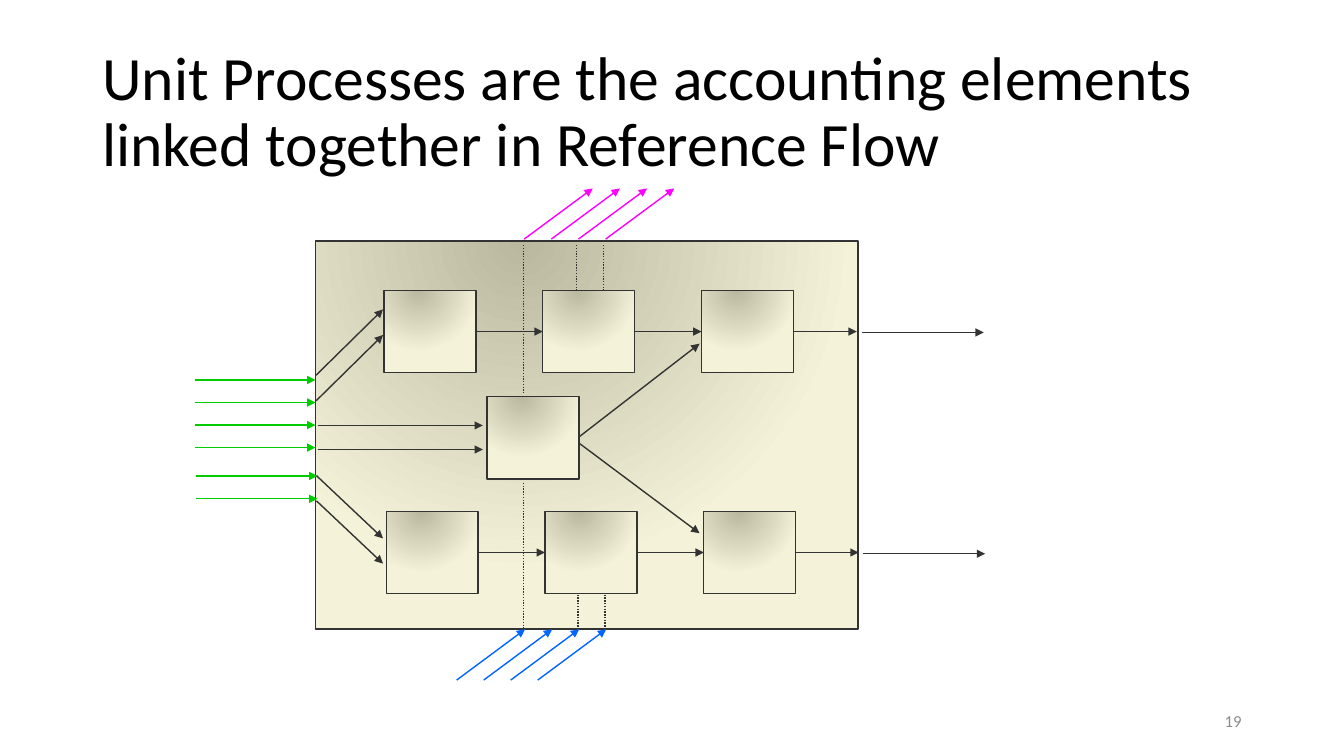
from lxml import etree
from pptx import Presentation, util as u
from pptx.dml.color import RGBColor
from pptx.enum import dml, shapes, text
from pptx.oxml.ns import qn

COLORS = {
    "ink": "333333", "title": "000000", "number": "8C8C8C",
    "shade": "BAB9A0", "cream": "F4F3D9",
    "input": "00CC00", "emission": "FF00FF", "resource": "0066FF",
}


class FlowSlide:
    font = "Calibri"
    line_width = u.Pt(1)

    def __init__(self, slide):
        self.slide = slide

    def color(self, name):
        return RGBColor.from_string(COLORS[name])

    def label(self, words, box, size, color, align, spacing=1.0):
        shape = self.slide.shapes.add_textbox(*map(u.Pt, box))
        frame = shape.text_frame
        frame.word_wrap = True
        frame.vertical_anchor = text.MSO_ANCHOR.MIDDLE
        paragraph = frame.paragraphs[0]
        paragraph.alignment = align
        paragraph.line_spacing = spacing
        run = paragraph.add_run()
        run.text = words
        for name, value in {"name": self.font, "size": u.Pt(size)}.items():
            setattr(run.font, name, value)
        run.font.color.rgb = self.color(color)

    def box(self, left, top, width, height):
        """Add a rectangle shaded by a circle around its upper edge."""
        shape = self.slide.shapes.add_shape(
            shapes.MSO_SHAPE.RECTANGLE, *map(u.Pt, (left, top, width, height)))
        shape.shadow.inherit = False
        shape.line.color.rgb = self.color("ink")
        shape.line.width = self.line_width
        shape.fill.gradient()
        for stop, name in zip(shape.fill.gradient_stops, ("shade", "cream")):
            stop.color.rgb = self.color(name)
        gradient = shape._element.spPr.find(qn("a:gradFill"))
        linear = gradient.find(qn("a:lin"))
        circle = etree.Element(qn("a:path"), {"path": "circle"})
        etree.SubElement(circle, qn("a:fillToRect"),
                         {"l": "38000", "t": "-20000", "r": "62000", "b": "120000"})
        gradient.replace(linear, circle)
        return shape

    def line(self, start, end, color="ink", dotted=False):
        """Add an arrow, or a dotted line without a head."""
        connector = self.slide.shapes.add_connector(
            shapes.MSO_CONNECTOR.STRAIGHT, *map(u.Pt, (*start, *end)))
        connector.line.color.rgb = self.color(color)
        connector.line.width = self.line_width
        if dotted:
            connector.line.dash_style = dml.MSO_LINE.ROUND_DOT
        else:
            etree.SubElement(connector.line._get_or_add_ln(),
                             qn("a:tailEnd"), {"type": "triangle"})
        etree.SubElement(connector._element.spPr, qn("a:effectLst"))
        return connector

    def parallel(self, count, step, start, end, color="ink", dotted=False):
        """Add equal lines, each moved by step from the one before."""
        for i in range(count):
            dx, dy = step[0] * i, step[1] * i
            self.line((start[0] + dx, start[1] + dy),
                      (end[0] + dx, end[1] + dy), color, dotted)

    def process_row(self, left, top, exit_x):
        """Add three linked unit processes and the arrow leaving the last."""
        width, height, step = 65.7, 58.9, 113.4
        middle = top + height / 2
        processes = [self.box(left + step * i, top, width, height) for i in range(3)]
        for i, process in enumerate(processes):
            right = left + step * i + width
            last = i == len(processes) - 1
            end = exit_x if last else left + step * (i + 1)
            arrow = self.line((right, middle), (end, middle))
            arrow.begin_connect(process, 3)
            if not last:
                arrow.end_connect(processes[i + 1], 1)


def main():
    presentation = Presentation()
    presentation.slide_width, presentation.slide_height = u.Pt(960), u.Pt(540)
    flow = FlowSlide(presentation.slides.add_slide(presentation.slide_layouts[6]))

    flow.label("Unit Processes are the accounting elements linked together in Reference Flow",
               (66, 28.8, 828, 104.4), 44, "title", text.PP_ALIGN.LEFT, 0.9)
    flow.box(225.4, 172.1, 387.4, 277.2)

    # Flows crossing the system boundary
    flow.parallel(4, (0, 16.1), (139, 271.4), (225.4, 271.4), "input")
    flow.parallel(2, (0, 16.3), (139.9, 340), (226.8, 340), "input")
    flow.parallel(4, (19.4, 0), (374.4, 170.8), (423.4, 134.6), "emission")
    flow.parallel(4, (19.3, 0), (326.2, 485.8), (375.1, 449.5), "resource")
    flow.parallel(2, (1, 158.1), (615.6, 237.5), (702.7, 237.5))

    # Unit processes
    flow.process_row(274.3, 207.4, 612)
    flow.process_row(275.9, 365.2, 613.4)
    flow.box(347.8, 283.2, 65.7, 58.9)

    # Flows inside the system
    flow.parallel(2, (0, 18.3), (225.8, 268), (273.6, 221))
    flow.parallel(2, (0, 18), (226.1, 339.8), (273.6, 384.6))
    flow.parallel(2, (0, 17.2), (226.8, 303.9), (344.9, 303.9))
    flow.line((414, 311.8), (499.7, 245.5))
    flow.line((414, 316.8), (499.7, 380.9))

    # Links to emissions above and resources below
    flow.parallel(2, (19.2, 0), (411.8, 175), (411.8, 207.7), dotted=True)
    flow.parallel(2, (19.4, 0), (412.9, 424.8), (412.9, 448.2), dotted=True)
    for top, bottom in ((175, 280.8), (344.9, 448.6)):
        flow.line((373.8, top), (373.8, bottom), dotted=True)

    flow.label("19", (678, 500.5, 216, 28.8), 12, "number", text.PP_ALIGN.RIGHT)
    presentation.save("out.pptx")


if __name__ == "__main__":
    main()
